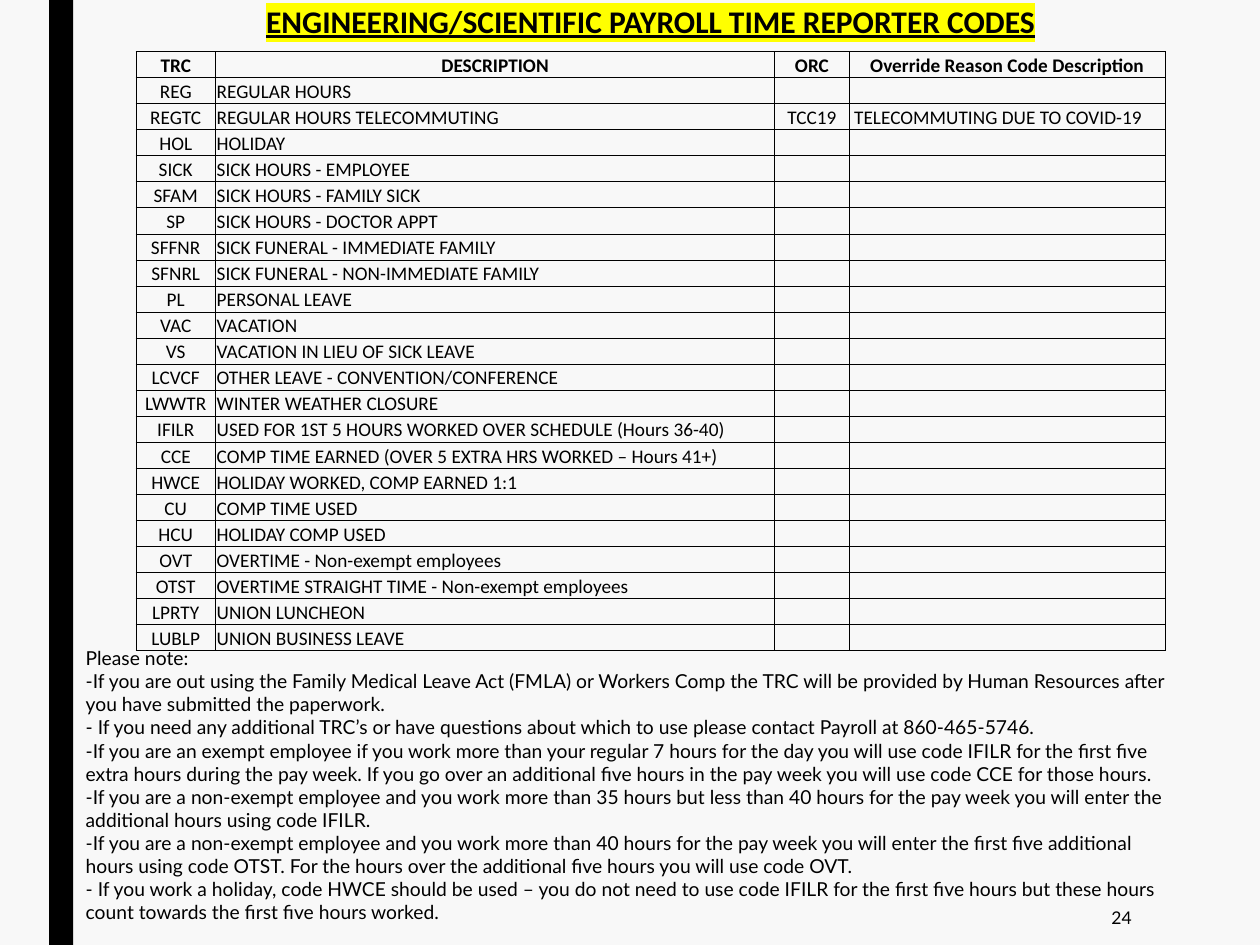
from dataclasses import dataclass

from lxml.etree import SubElement
from pptx import Presentation
from pptx.dml.color import RGBColor
from pptx.enum.shapes import MSO_SHAPE
from pptx.enum.text import MSO_ANCHOR, MSO_AUTO_SIZE, PP_ALIGN
from pptx.oxml.ns import qn
from pptx.util import Inches, Pt

PAGE_WIDTH, PAGE_HEIGHT = 10, 7.5
COLORS = {"page": "F8F8F8", "ink": "000000", "highlight": "FFFF00"}
TABLE_FONT, NOTE_FONT = "Calibri", "Lato"

TITLE = "ENGINEERING/SCIENTIFIC PAYROLL TIME REPORTER CODES"
HEADINGS = ("TRC", "DESCRIPTION", "ORC", "Override Reason Code Description")
COLUMN_WIDTHS = (0.63, 4.44, 0.59, 2.51)
CODES = [
    ("REG", "REGULAR HOURS"),
    ("REGTC", "REGULAR HOURS TELECOMMUTING", "TCC19", "TELECOMMUTING DUE TO COVID-19"),
    ("HOL", "HOLIDAY"),
    ("SICK", "SICK HOURS - EMPLOYEE"),
    ("SFAM", "SICK HOURS - FAMILY SICK"),
    ("SP", "SICK HOURS - DOCTOR APPT"),
    ("SFFNR", "SICK FUNERAL - IMMEDIATE FAMILY"),
    ("SFNRL", "SICK FUNERAL - NON-IMMEDIATE FAMILY"),
    ("PL", "PERSONAL LEAVE"),
    ("VAC", "VACATION"),
    ("VS", "VACATION IN LIEU OF SICK LEAVE"),
    ("LCVCF", "OTHER LEAVE - CONVENTION/CONFERENCE"),
    ("LWWTR", "WINTER WEATHER CLOSURE"),
    ("IFILR", "USED FOR 1ST 5 HOURS WORKED OVER SCHEDULE (Hours 36-40)"),
    ("CCE", "COMP TIME EARNED (OVER 5 EXTRA HRS WORKED – Hours 41+)"),
    ("HWCE", "HOLIDAY WORKED, COMP EARNED 1:1"),
    ("CU", "COMP TIME USED"),
    ("HCU", "HOLIDAY COMP USED"),
    ("OVT", "OVERTIME - Non-exempt employees"),
    ("OTST", "OVERTIME STRAIGHT TIME - Non-exempt employees"),
    ("LPRTY", "UNION LUNCHEON"),
    ("LUBLP", "UNION BUSINESS LEAVE"),
]
NOTES = [
    "Please note:",
    "-If you are out using the Family Medical Leave Act (FMLA) or Workers Comp the TRC "
    "will be provided by Human Resources after you have submitted the paperwork.",
    "- If you need any additional TRC’s or have questions about which to use please "
    "contact Payroll at 860-465-5746.",
    "-If you are an exempt employee if you work more than your regular 7 hours for the "
    "day you will use code IFILR for the first five extra hours during the pay week. If "
    "you go over an additional five hours in the pay week you will use code CCE for "
    "those hours.",
    "-If you are a non-exempt employee and you work more than 35 hours but less than 40 "
    "hours for the pay week you will enter the additional hours using code IFILR.",
    "-If you are a non-exempt employee and you work more than 40 hours for the pay week "
    "you will enter the first five additional hours using code OTST. For the hours over "
    "the additional five hours you will use code OVT.",
    "- If you work a holiday, code HWCE should be used – you do not need to use code "
    "IFILR for the first five hours but these hours count towards the first five hours "
    "worked.",
]


@dataclass
class Box:
    left: float
    top: float
    width: float
    height: float

    def lengths(self):
        return [Inches(value) for value in (self.left, self.top, self.width, self.height)]


def color(name):
    return RGBColor.from_string(COLORS[name])


def set_all(target, **values):
    for name, value in values.items():
        setattr(target, name, value)


def add_text(para, text, **font_values):
    span = para.add_run()
    span.text = text
    set_all(span.font, **font_values)
    span.font.color.rgb = color("ink")
    return span


def highlight(span):
    fill = span.font._element.find(qn("a:solidFill"))
    mark = SubElement(span.font._element, qn("a:highlight"))
    SubElement(mark, qn("a:srgbClr"), val=COLORS["highlight"])
    fill.addnext(mark)


def set_borders(cell, visible_sides):
    properties = cell._tc.get_or_add_tcPr()
    for side in "LRTB":
        line = SubElement(properties, qn(f"a:ln{side}"), w=str(Pt(0.5)))
        if side in visible_sides:
            fill = SubElement(line, qn("a:solidFill"))
            SubElement(fill, qn("a:srgbClr"), val=COLORS["ink"])
        else:
            SubElement(line, qn("a:noFill"))


def format_cell(cell, borders, empty_size):
    """Set the frame of a cell and the text size that holds its height while empty."""
    set_borders(cell, borders)
    cell.fill.background()
    set_all(cell, vertical_anchor=MSO_ANCHOR.BOTTOM, margin_left=Inches(0.01),
            margin_right=Inches(0.01), margin_top=Inches(0.01), margin_bottom=0)
    SubElement(cell.text_frame.paragraphs[0]._p, qn("a:endParaRPr"),
               sz=str(empty_size * 100))


def add_code_table(page, box):
    title_height, spacer_height = 0.32, 0.08
    rows = [(TITLE,), (), HEADINGS, *CODES]
    code_height = (box.height - title_height - spacer_height) / (len(rows) - 2)
    heights = [title_height, spacer_height] + [code_height] * (len(rows) - 2)

    table = page.shapes.add_table(len(rows), len(HEADINGS), *box.lengths()).table
    set_all(table, first_row=False, horz_banding=False)
    for column, width in zip(table.columns, COLUMN_WIDTHS):
        column.width = Inches(width)
    for row, height in zip(table.rows, heights):
        row.height = Inches(height)

    for row_index, texts in enumerate(rows):
        borders = {0: "", 1: "B"}.get(row_index, "LRTB")
        for column_index in range(len(HEADINGS)):
            cell = table.cell(row_index, column_index)
            format_cell(cell, borders, 4 if row_index == 1 else 11)
            if column_index >= len(texts):
                continue
            para = cell.text_frame.paragraphs[0]
            is_heading = row_index <= 2
            if is_heading or column_index in (0, 2):
                para.alignment = PP_ALIGN.CENTER
            elif column_index == 3:
                cell.margin_left = Inches(0.04)
            span = add_text(para, texts[column_index], name=TABLE_FONT,
                            size=Pt(18 if row_index == 0 else 11), bold=is_heading)
            if row_index == 0:
                span.font.underline = True
                highlight(span)
    table.cell(0, 0).merge(table.cell(0, len(HEADINGS) - 1))


def fill_notes(body, box):
    set_all(body, **dict(zip(("left", "top", "width", "height"), box.lengths())))
    frame = body.text_frame
    set_all(frame, word_wrap=True, auto_size=MSO_AUTO_SIZE.SHAPE_TO_FIT_TEXT,
            vertical_anchor=MSO_ANCHOR.TOP)
    for index, note in enumerate(NOTES):
        para = frame.add_paragraph() if index else frame.paragraphs[0]
        set_all(para, space_before=Pt(0), alignment=PP_ALIGN.LEFT)
        properties = para._p.get_or_add_pPr()
        properties.set("marL", "0")
        properties.set("indent", "0")
        SubElement(properties, qn("a:buNone"))
        add_text(para, note, name=NOTE_FONT, size=Pt(11))


def add_side_bar(page, box):
    bar = page.shapes.add_shape(MSO_SHAPE.RECTANGLE, *box.lengths())
    bar.shadow.inherit = False
    bar.fill.solid()
    bar.fill.fore_color.rgb = color("ink")
    bar.line.fill.background()


def add_page_number(page, box):
    frame = page.shapes.add_textbox(*box.lengths()).text_frame
    set_all(frame, word_wrap=True, vertical_anchor=MSO_ANCHOR.MIDDLE)
    para = frame.paragraphs[0]
    para.alignment = PP_ALIGN.RIGHT
    add_text(para, "24", name=NOTE_FONT, size=Pt(10))


def main():
    deck = Presentation()
    set_all(deck, slide_width=Inches(PAGE_WIDTH), slide_height=Inches(PAGE_HEIGHT))
    page = deck.slides.add_slide(deck.slide_layouts[1])
    page.background.fill.solid()
    page.background.fill.fore_color.rgb = color("page")
    title = page.shapes.title
    title._element.getparent().remove(title._element)

    add_side_bar(page, Box(0.39, 0, 0.19, PAGE_HEIGHT))
    add_page_number(page, Box(7.77, 7.06, 1.31, 0.44))
    fill_notes(page.placeholders[1], Box(0.58, 5.08, 8.92, 2.32))
    add_code_table(page, Box(1.08, 0.01, sum(COLUMN_WIDTHS), 5.16))
    deck.save("out.pptx")


if __name__ == "__main__":
    main()
